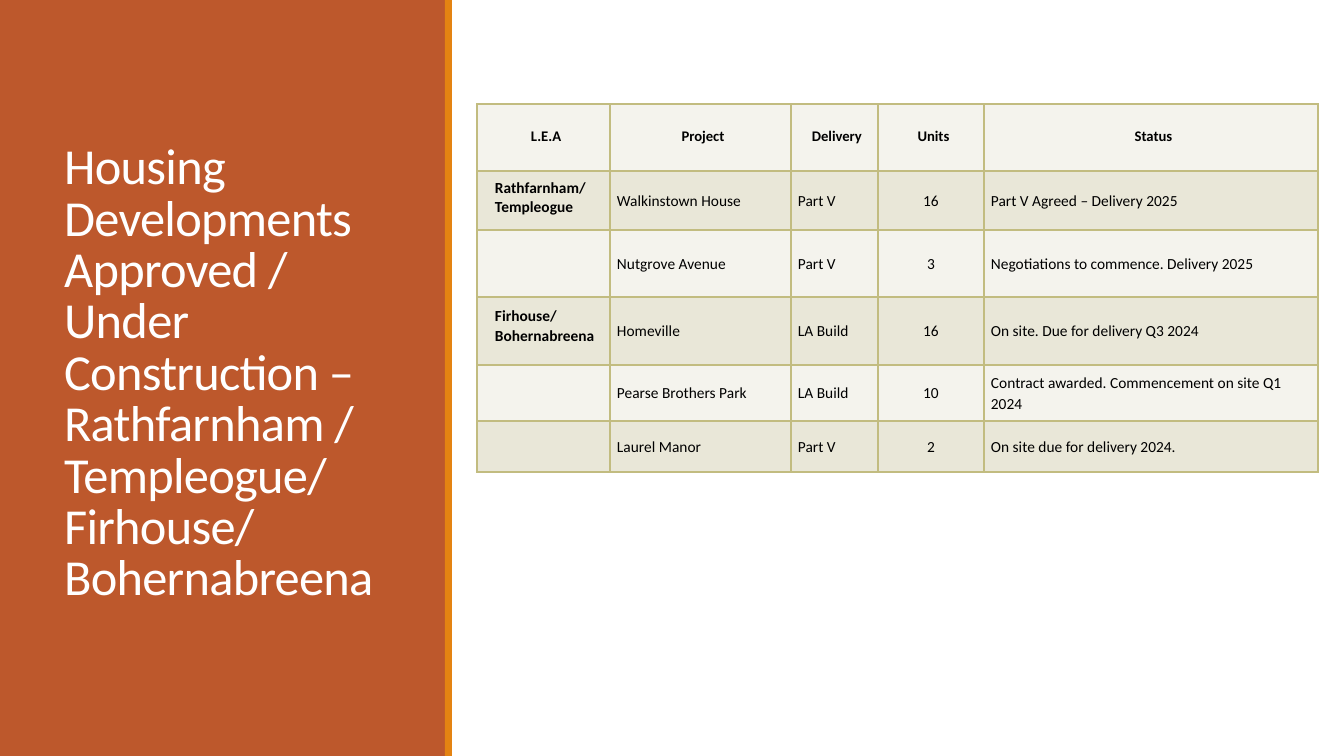
from lxml.etree import SubElement
from pptx import Presentation
from pptx.dml.color import RGBColor
from pptx.enum.shapes import MSO_SHAPE
from pptx.enum.text import MSO_ANCHOR, MSO_AUTO_SIZE, PP_ALIGN
from pptx.oxml.ns import qn
from pptx.util import Pt

PX = 914400 / 100.8
FONT = "Calibri"
WHITE = RGBColor(0xFF, 0xFF, 0xFF)
BLACK = RGBColor(0x00, 0x00, 0x00)
RUST = RGBColor(0xBD, 0x58, 0x2C)
ORANGE = RGBColor(0xE4, 0x83, 0x12)
BORDER = RGBColor(0xC2, 0xBC, 0x80)
BANDS = (RGBColor(0xF4, 0xF3, 0xED), RGBColor(0xE9, 0xE7, 0xD8))

TITLE = ("Housing Developments Approved / Under Construction – "
         "Rathfarnham / Templeogue/ Firhouse/\vBohernabreena")
COLUMN_WIDTHS = (133, 181, 87, 106, 334)
ROW_HEIGHTS = (67, 59, 67, 68, 56, 51)
UNITS_COLUMN = 3
HEADER_INSETS = (13, 5, 8, 8)
AREA_INSETS = (18, 8, 10, 10)
BODY_INSETS = (7, 0, 7, 0)
ROWS = (
    ("L.E.A", "Project", "Delivery", "Units", "Status"),
    ("Rathfarnham/\nTempleogue", "Walkinstown House", "Part V", "16",
     "Part V Agreed – Delivery 2025"),
    ("", "Nutgrove Avenue", "Part V", "3", "Negotiations to commence. Delivery 2025"),
    ("Firhouse/ Bohernabreena", "Homeville", "LA Build", "16",
     "On site. Due for delivery Q3 2024"),
    ("", "Pearse Brothers Park", "LA Build", "10",
     "Contract awarded. Commencement on site Q1 2024"),
    ("", "Laurel Manor", "Part V", "2", "On site due for delivery 2024."),
)


def px(length):
    """Turn pixels into EMU."""
    return round(length * PX)


def set_font(paragraph, size, color, bold=False):
    """Format all the text of a paragraph."""
    font = paragraph.font
    font.name, font.size, font.bold = FONT, Pt(size), bold
    font.color.rgb = color


def add_panel(slide, left, width, color):
    """Add a full-height rectangle without outline."""
    shape = slide.shapes.add_shape(
        MSO_SHAPE.RECTANGLE, px(left), 0, px(width), px(756))
    shape.shadow.inherit = False
    shape.fill.solid()
    shape.fill.fore_color.rgb = color
    shape.line.fill.background()


def place_title(slide):
    """Put the title in front of the side panel."""
    title = slide.shapes.title
    title.left, title.top, title.width, title.height = map(px, (54, 57, 340, 636))
    frame = title.text_frame
    frame.text = TITLE
    frame.word_wrap = True
    frame.auto_size = MSO_AUTO_SIZE.NONE
    frame.vertical_anchor = MSO_ANCHOR.MIDDLE
    paragraph = frame.paragraphs[0]
    paragraph.alignment = PP_ALIGN.LEFT
    paragraph.line_spacing = 0.85
    set_font(paragraph, 36, WHITE)
    for run in paragraph.runs:
        run.font._element.set("spc", "-50")
    slide.shapes._spTree.append(title._element)


def set_borders(cell):
    """Draw a thin line on the four sides of a cell."""
    properties = cell._tc.get_or_add_tcPr()
    for index, side in enumerate(("lnL", "lnR", "lnT", "lnB")):
        line = properties.makeelement(qn(f"a:{side}"), {"w": str(Pt(1))})
        color = SubElement(SubElement(line, qn("a:solidFill")), qn("a:srgbClr"))
        color.set("val", str(BORDER))
        properties.insert(index, line)


def fill_cell(cell, text, row, column):
    """Write and format one cell by its place in the table."""
    header, area = row == 0, column == 0 and row > 0
    insets = HEADER_INSETS if header else AREA_INSETS if area else BODY_INSETS
    (cell.margin_left, cell.margin_top,
     cell.margin_right, cell.margin_bottom) = map(px, insets)
    cell.vertical_anchor = MSO_ANCHOR.TOP if area else MSO_ANCHOR.MIDDLE
    cell.fill.solid()
    cell.fill.fore_color.rgb = BANDS[row % 2]
    set_borders(cell)
    cell.text = text
    paragraphs = cell.text_frame.paragraphs
    for paragraph in paragraphs:
        centred = header or column == UNITS_COLUMN
        paragraph.alignment = PP_ALIGN.CENTER if centred else PP_ALIGN.LEFT
        paragraph.line_spacing = 1.0 if header or len(paragraphs) > 1 else 1.07
        set_font(paragraph, 10.5 if header else 11, BLACK, header or area)


def add_housing_table(slide):
    """Add the table of housing projects."""
    table = slide.shapes.add_table(
        len(ROWS), len(COLUMN_WIDTHS), px(477), px(104),
        px(sum(COLUMN_WIDTHS)), px(sum(ROW_HEIGHTS))).table
    table.first_row = table.horz_banding = False
    for column, width in zip(table.columns, COLUMN_WIDTHS):
        column.width = px(width)
    for row, height in zip(table.rows, ROW_HEIGHTS):
        row.height = px(height)
    for row, texts in enumerate(ROWS):
        for column, text in enumerate(texts):
            fill_cell(table.cell(row, column), text, row, column)


def main():
    """Build and save the slide."""
    presentation = Presentation()
    presentation.slide_width, presentation.slide_height = px(1344), px(756)
    slide = presentation.slides.add_slide(presentation.slide_layouts[5])
    add_panel(slide, 0, 446, RUST)
    place_title(slide)
    add_panel(slide, 445, 7, ORANGE)
    add_housing_table(slide)
    presentation.save("out.pptx")


if __name__ == "__main__":
    main()
